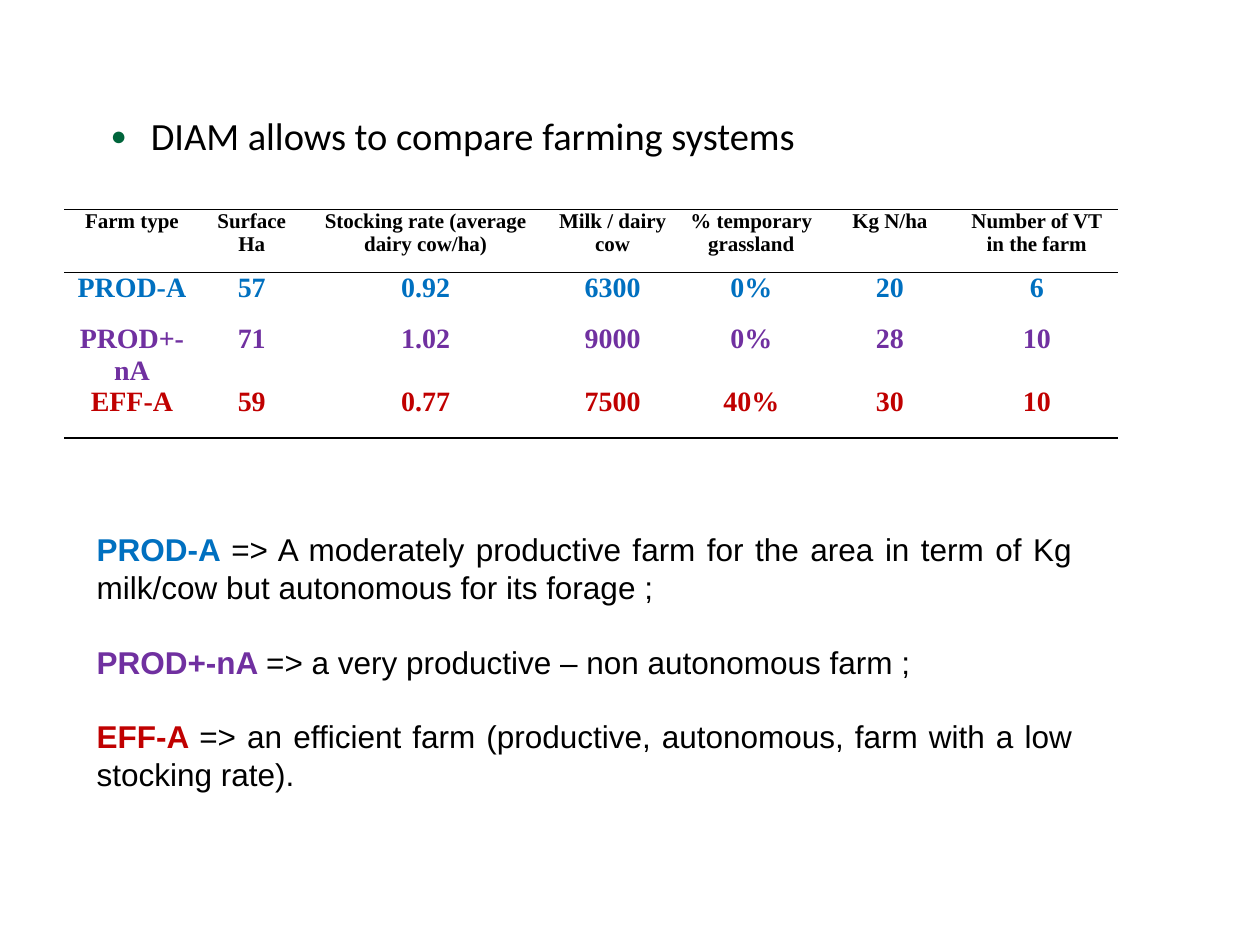
from lxml import etree
from pptx import Presentation
from pptx.dml.color import RGBColor
from pptx.enum.text import MSO_ANCHOR, PP_ALIGN
from pptx.oxml.ns import qn
from pptx.util import Cm, Pt

CENTER, JUSTIFY = PP_ALIGN.CENTER, PP_ALIGN.JUSTIFY
MIDDLE = MSO_ANCHOR.MIDDLE

BLACK = RGBColor(0x00, 0x00, 0x00)
GREEN = RGBColor(0x00, 0x65, 0x3B)
BLUE = RGBColor(0x00, 0x70, 0xC0)
PURPLE = RGBColor(0x70, 0x30, 0xA0)
RED = RGBColor(0xC0, 0x00, 0x00)

# Content
HEADING = "DIAM allows to compare farming systems"
HEADERS = ["Farm type", "Surface Ha", "Stocking rate (average dairy cow/ha)",
           "Milk / dairy cow", "% temporary grassland", "Kg N/ha",
           "Number of VT in the farm"]
FARMS = [
    (BLUE, ["PROD-A", "57", "0.92", "6300", "0%", "20", "6"],
     "=> A moderately productive farm for the area in term of Kg milk/cow "
     "but autonomous for its forage ; "),
    (PURPLE, ["PROD+-nA", "71", "1.02", "9000", "0%", "28", "10"],
     "=> a very productive – non autonomous farm ;"),
    (RED, ["EFF-A", "59", "0.77", "7500", "40%", "30", "10"],
     "=> an efficient farm (productive, autonomous, farm with a low stocking rate)."),
]
COLUMN_WIDTHS = [2.72, 2.11, 4.9, 2.64, 2.95, 2.64, 3.28]
ROW_HEIGHTS = [1.27, 1.04, 1.04, 1.04]


def style_font(font, name, size, color=BLACK, bold=False):
    font.name = name
    font.size = Pt(size)
    font.color.rgb = color
    font.bold = bold


def set_borders(cell, ruled_sides):
    """Draw a thin black rule on the named sides and none on the others."""
    properties = cell._tc.get_or_add_tcPr()
    for side in "LRTB":
        line = etree.SubElement(properties, qn(f"a:ln{side}"), w=str(Pt(1)))
        if side in ruled_sides:
            fill = etree.SubElement(line, qn("a:solidFill"))
            etree.SubElement(fill, qn("a:srgbClr"), val=str(BLACK))
        else:
            etree.SubElement(line, qn("a:noFill"))


def add_bullet(paragraph):
    properties = paragraph._p.get_or_add_pPr()
    properties.set("marL", str(Cm(1.09)))
    properties.set("indent", str(Cm(-0.81)))
    color = etree.SubElement(properties, qn("a:buClr"))
    etree.SubElement(color, qn("a:srgbClr"), val=str(GREEN))
    etree.SubElement(properties, qn("a:buSzPct"), val="70000")
    etree.SubElement(properties, qn("a:buFont"), typeface="Arial")
    etree.SubElement(properties, qn("a:buChar"), char="●")


def add_heading(slide):
    box = slide.shapes.add_textbox(Cm(1.7), Cm(2.21), Cm(14.91), Cm(1.14))
    paragraph = box.text_frame.paragraphs[0]
    paragraph.text = HEADING
    add_bullet(paragraph)
    paragraph.line_spacing = 0.95
    style_font(paragraph.font, "Calibri", 22)


def add_farm_table(slide):
    rows = [(BLACK, HEADERS)] + [(color, values) for color, values, _ in FARMS]
    table = slide.shapes.add_table(
        len(rows), len(HEADERS), Cm(1.3), Cm(4.22),
        Cm(sum(COLUMN_WIDTHS)), Cm(sum(ROW_HEIGHTS))).table
    table.first_row = table.horz_banding = False
    for column, width in zip(table.columns, COLUMN_WIDTHS):
        column.width = Cm(width)
    for row, height in zip(table.rows, ROW_HEIGHTS):
        row.height = Cm(height)

    last = len(rows) - 1
    for row_index, (color, values) in enumerate(rows):
        is_header = row_index == 0
        sides = ("T" if row_index <= 1 else "") + ("B" if row_index in (0, last) else "")
        for column_index, value in enumerate(values):
            cell = table.cell(row_index, column_index)
            set_borders(cell, sides)
            cell.fill.background()
            cell.margin_left = cell.margin_right = Cm(0.18)
            cell.margin_top = cell.margin_bottom = 0
            cell.text = value
            paragraph = cell.text_frame.paragraphs[0]
            paragraph.alignment = CENTER
            if is_header:
                paragraph.space_after = Pt(6)
            style_font(paragraph.font, "Times New Roman", 12 if is_header else 16,
                       color, bold=True)


def add_explanations(slide):
    box = slide.shapes.add_textbox(Cm(1.7), Cm(10.52), Cm(20.17), Cm(5.64))
    frame = box.text_frame
    frame.word_wrap = True
    frame.vertical_anchor = MIDDLE
    for index, (color, values, explanation) in enumerate(FARMS):
        paragraph = frame.add_paragraph() if index else frame.paragraphs[0]
        paragraph.alignment = JUSTIFY
        if index:
            paragraph.space_before = Pt(21)
        for text, text_color, bold in ((values[0] + " ", color, True),
                                       (explanation, BLACK, False)):
            run = paragraph.add_run()
            run.text = text
            style_font(run.font, "Arial", 18, text_color, bold)


def main():
    presentation = Presentation()
    presentation.slide_width, presentation.slide_height = Cm(25.4), Cm(19.05)
    slide = presentation.slides.add_slide(presentation.slide_layouts[6])
    add_farm_table(slide)
    add_heading(slide)
    add_explanations(slide)
    presentation.save("out.pptx")


if __name__ == "__main__":
    main()
